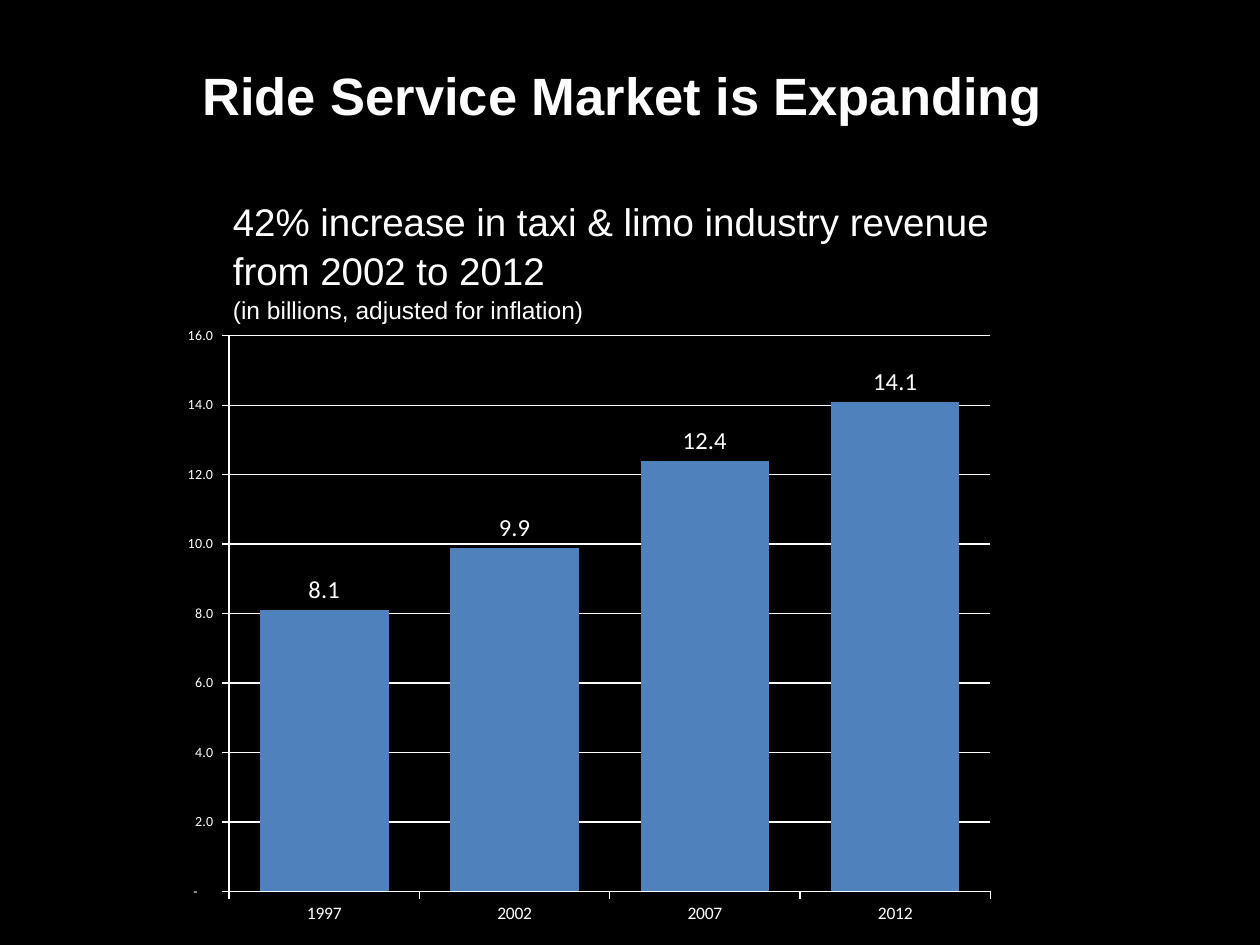
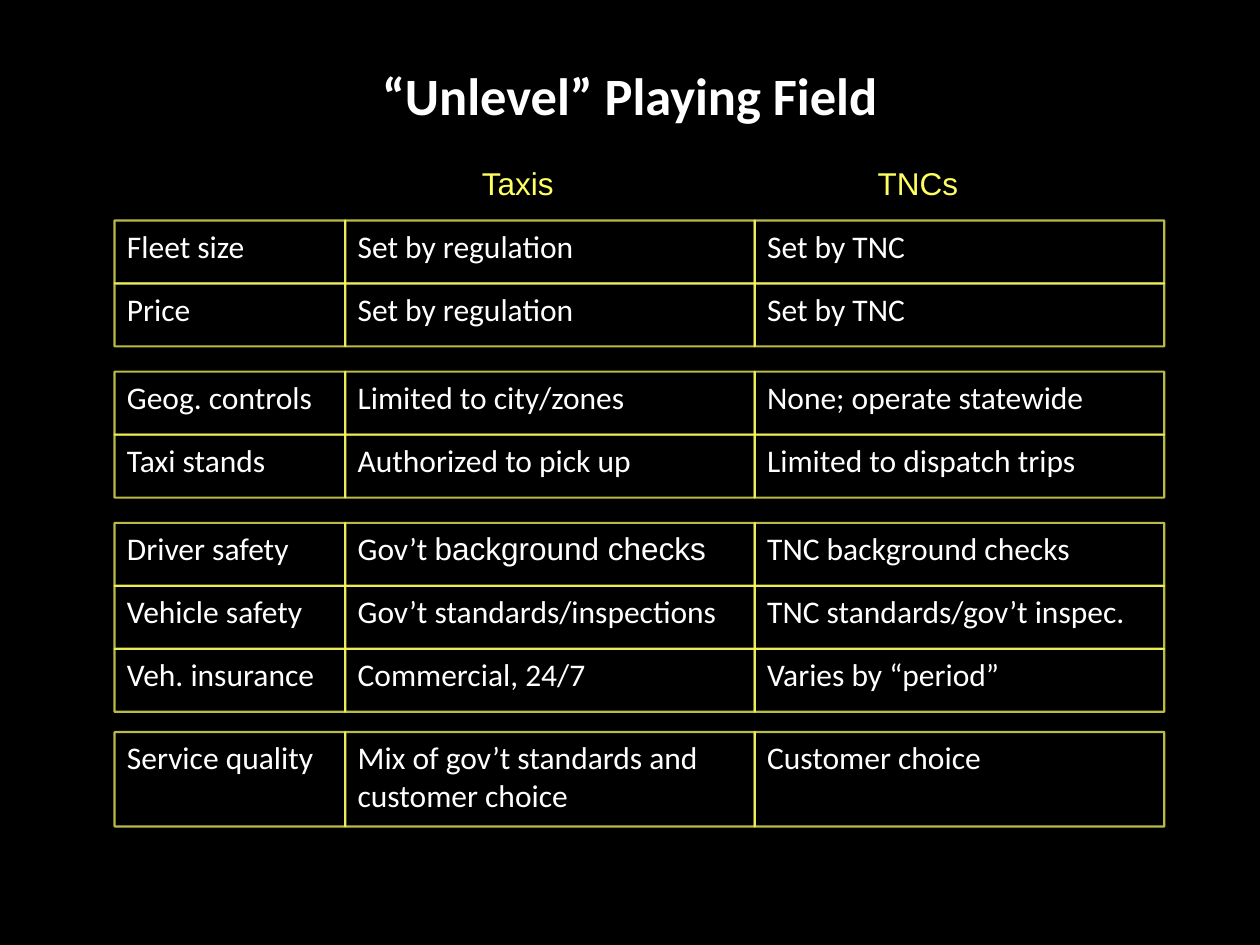
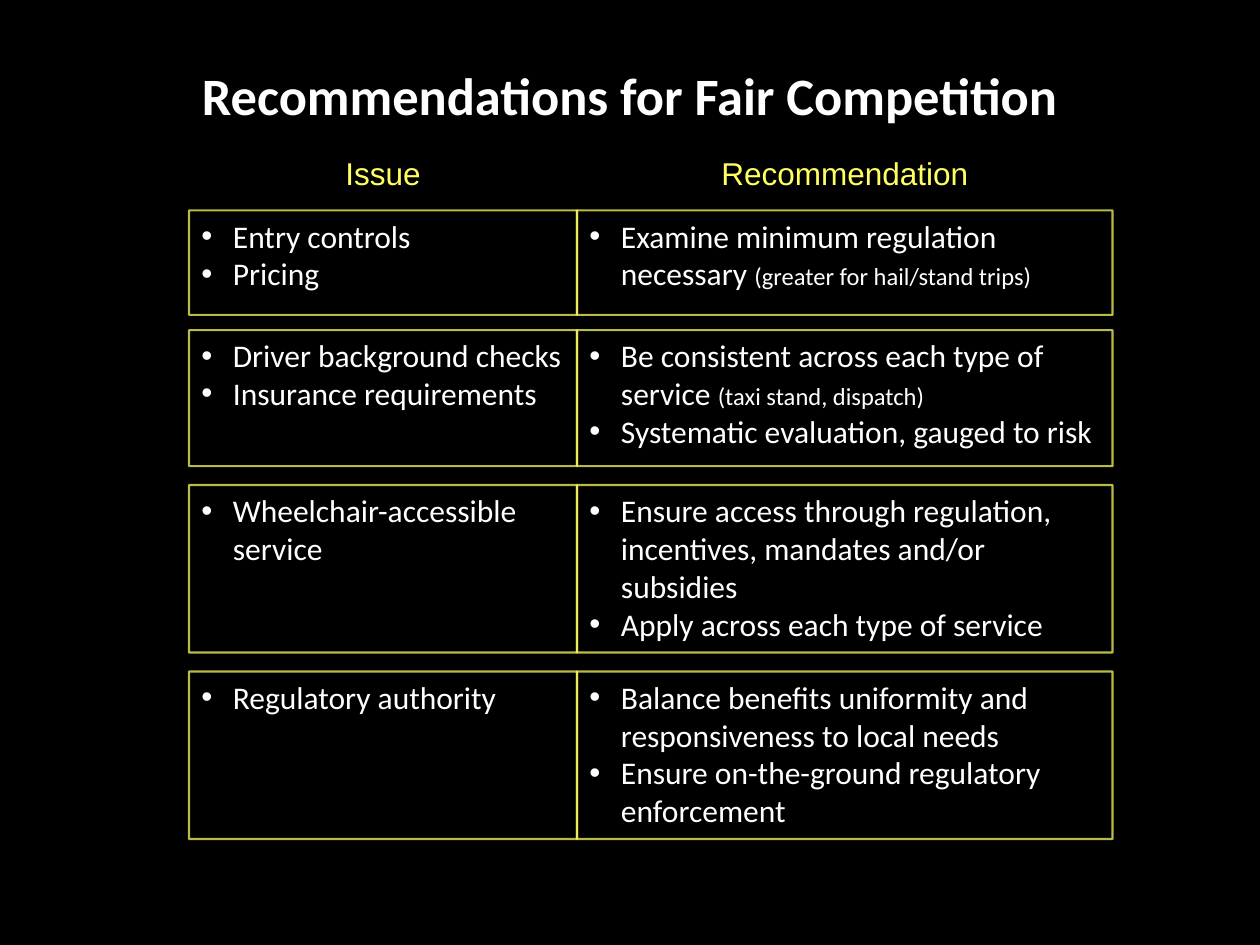
from dataclasses import dataclass
from itertools import accumulate
from typing import NamedTuple

from lxml.etree import SubElement
from pptx import Presentation
from pptx.chart.data import CategoryChartData
from pptx.dml.color import RGBColor
from pptx.enum.chart import XL_CHART_TYPE, XL_LABEL_POSITION, XL_TICK_MARK
from pptx.enum.shapes import MSO_SHAPE
from pptx.enum.text import MSO_ANCHOR, MSO_AUTO_SIZE, PP_ALIGN
from pptx.oxml import parse_xml
from pptx.oxml.ns import nsdecls, qn
from pptx.util import Inches, Pt


@dataclass(frozen=True)
class Theme:
    background: RGBColor = RGBColor(0x00, 0x00, 0x00)
    text: RGBColor = RGBColor(0xFF, 0xFF, 0xFF)
    accent: RGBColor = RGBColor(0xFF, 0xFF, 0x61)
    bar: RGBColor = RGBColor(0x4F, 0x81, 0xBD)
    sans: str = "Arial"
    body: str = "Calibri"
    title_size: float = 30
    lead_size: float = 22
    cell_size: float = 18
    note_size: float = 14
    axis_size: float = 10
    scale_size: float = 8
    border: float = 1.25
    border_alpha: int = 72000


THEME = Theme()
AXIS_FORMAT = '_(* #,##0.0_);_(* \\(#,##0.0\\);_(* "-"??_);_(@_)'


class Run(NamedTuple):
    text: str
    size: float = THEME.cell_size
    font: str = THEME.body
    color: RGBColor = THEME.text
    bold: bool = False


def note(text):
    return Run(text, THEME.note_size)


def add_run(p, run):
    r = p.add_run()
    r.text = run.text
    r.font.size = Pt(run.size)
    r.font.name = run.font
    r.font.bold = run.bold
    r.font.color.rgb = run.color


def add_paragraphs(tf, paragraphs):
    """Write paragraphs; each one is a string, a Run, or a list of these."""
    for i, runs in enumerate(paragraphs):
        p = tf.paragraphs[0] if i == 0 else tf.add_paragraph()
        for run in [runs] if isinstance(runs, (str, Run)) else runs:
            add_run(p, Run(run) if isinstance(run, str) else run)


def style_master(prs):
    """Set the background and title box that all slides inherit."""
    fill = prs.slide_master.background.fill
    fill.solid()
    fill.fore_color.rgb = THEME.background
    title = prs.slide_layouts[5].placeholders.get(idx=0)
    title.left, title.top = Inches(0.5), Inches(0.42)
    title.width, title.height = Inches(9), Inches(0.83)
    tf = title.text_frame
    tf.vertical_anchor = MSO_ANCHOR.TOP
    tf.margin_top = Inches(0.08)
    tf.auto_size = MSO_AUTO_SIZE.NONE


def add_titled_slide(prs, title, font=THEME.body):
    slide = prs.slides.add_slide(prs.slide_layouts[5])
    p = slide.shapes.title.text_frame.paragraphs[0]
    p.alignment = PP_ALIGN.CENTER
    add_run(p, Run(title, THEME.title_size, font, bold=True))
    return slide


def add_box(slide, left, top, width, height, paragraphs):
    sp = slide.shapes.add_shape(MSO_SHAPE.RECTANGLE, Inches(left), Inches(top),
                                Inches(width), Inches(height))
    sp.shadow.inherit = False
    sp.fill.background()
    sp.line.fill.background()
    tf = sp.text_frame
    tf.word_wrap = True
    tf.vertical_anchor = MSO_ANCHOR.TOP
    add_paragraphs(tf, paragraphs)
    return sp


def add_heading(slide, left, top, width, text):
    sp = add_box(slide, left, top, width, 0.42,
                 [Run(text, font=THEME.sans, color=THEME.accent)])
    sp.text_frame.paragraphs[0].alignment = PP_ALIGN.CENTER


def add_cell(slide, left, top, width, height, paragraphs, bulleted):
    sp = add_box(slide, left, top, width, height, paragraphs)
    sp.line.color.rgb = THEME.accent
    sp.line.width = Pt(THEME.border)
    line_color = next(sp._element.spPr.iter(qn("a:srgbClr")))
    SubElement(line_color, qn("a:alpha"), val=str(THEME.border_alpha))
    for p in sp.text_frame.paragraphs:
        p.alignment = PP_ALIGN.LEFT
        pPr = p._p.get_or_add_pPr()
        pPr.set("marL", str(Inches(0.25)))
        pPr.set("indent", str(-Inches(0.25)))
        if bulleted:
            SubElement(pPr, qn("a:buFont"), typeface=THEME.sans)
            SubElement(pPr, qn("a:buChar"), char="•")


def add_row(slide, left, top, widths, height, cells, bulleted=False):
    lefts = accumulate(widths[:-1], initial=left)
    for x, width, paragraphs in zip(lefts, widths, cells):
        add_cell(slide, x, top, width, height, paragraphs, bulleted)


def add_lead(slide):
    sp = slide.shapes.add_textbox(Inches(1.75), Inches(1.5), Inches(6.42), Inches(1.08))
    tf = sp.text_frame
    tf.word_wrap = True
    add_paragraphs(tf, [
        Run("42% increase in taxi & limo industry revenue from 2002 to 2012",
            THEME.lead_size, THEME.sans),
        Run("(in billions, adjusted for inflation)", THEME.note_size, THEME.sans),
    ])
    for p in tf.paragraphs:
        p.line_spacing = 1.06


def style_axis(axis, size):
    axis.major_tick_mark = XL_TICK_MARK.OUTSIDE
    axis.minor_tick_mark = XL_TICK_MARK.NONE
    axis.format.line.color.rgb = THEME.text
    axis.format.line.width = Pt(0.75)
    axis.tick_labels.font.size = Pt(size)
    axis.tick_labels.font.color.rgb = THEME.text


def fix_plot_area(chart, x, y, w, h):
    """Place the inner plot area by fractions of a chart without background."""
    plot_area = chart._chartSpace.chart.plotArea
    for old in plot_area.findall(qn("c:layout")):
        plot_area.remove(old)
    layout = SubElement(plot_area, qn("c:layout"))
    plot_area.insert(0, layout)
    manual = SubElement(layout, qn("c:manualLayout"))
    settings = {"layoutTarget": "inner", "xMode": "edge", "yMode": "edge",
                "x": x, "y": y, "w": w, "h": h}
    for tag, value in settings.items():
        SubElement(manual, qn(f"c:{tag}"), val=str(value))
    chart._chartSpace.chart.addnext(parse_xml(
        f'<c:spPr {nsdecls("c", "a")}><a:noFill/><a:ln><a:noFill/></a:ln></c:spPr>'))


def add_revenue_chart(slide):
    data = CategoryChartData(number_format="0.0")
    data.categories = ["1997", "2002", "2007", "2012"]
    data.add_series("Series 1", [8.1, 9.9, 12.4, 14.1])
    chart = slide.shapes.add_chart(
        XL_CHART_TYPE.COLUMN_CLUSTERED, Inches(1.42), Inches(2.42),
        Inches(6.64), Inches(4.91), data).chart
    chart.has_title = False
    chart.has_legend = False
    chart.font.name = THEME.body
    chart.font.size = Pt(THEME.axis_size)
    chart.font.color.rgb = THEME.text
    fix_plot_area(chart, 0.06, 0.05, 0.91, 0.9)

    style_axis(chart.category_axis, THEME.axis_size)
    scale = chart.value_axis
    style_axis(scale, THEME.scale_size)
    scale.minimum_scale, scale.maximum_scale, scale.major_unit = 0, 16, 2
    scale.has_major_gridlines = True
    scale.major_gridlines.format.line.color.rgb = THEME.text
    scale.major_gridlines.format.line.width = Pt(0.75)
    scale.tick_labels.number_format = AXIS_FORMAT
    scale.tick_labels.number_format_is_linked = False

    plot = chart.plots[0]
    plot.gap_width = 48
    plot.vary_by_categories = False
    fill = plot.series[0].format.fill
    fill.solid()
    fill.fore_color.rgb = THEME.bar
    plot.has_data_labels = True
    labels = plot.data_labels
    labels.show_value = True
    labels.number_format = "0.0"
    labels.number_format_is_linked = False
    labels.position = XL_LABEL_POSITION.OUTSIDE_END
    labels.font.size = Pt(THEME.note_size)
    labels.font.name = THEME.body
    labels.font.color.rgb = THEME.text


def build_market(prs):
    slide = add_titled_slide(prs, "Ride Service Market is Expanding ", THEME.sans)
    add_lead(slide)
    add_revenue_chart(slide)


def build_playing_field(prs):
    slide = add_titled_slide(prs, "“Unlevel” Playing Field")
    add_heading(slide, 2.57, 1.25, 3.08, "Taxis")
    add_heading(slide, 5.16, 1.25, 4.25, "TNCs")
    groups = [  # top, row height, rows
        (1.75, 0.5, [
            (["Fleet size"], ["Set by regulation"], ["Set by TNC"]),
            (["Price"], ["Set by regulation"], ["Set by TNC"]),
        ]),
        (2.95, 0.5, [
            (["Geog. controls"], ["Limited to city/zones"], ["None; operate statewide"]),
            (["Taxi stands"], ["Authorized to pick up"], ["Limited to dispatch trips"]),
        ]),
        (4.15, 0.5, [
            (["Driver safety"],
             [["Gov’t ", Run("background checks", font=THEME.sans)]],
             ["TNC background checks"]),
            (["Vehicle safety"], ["Gov’t standards/inspections"],
             ["TNC standards/gov’t inspec."]),
            (["Veh. insurance"], ["Commercial, 24/7"], ["Varies by “period”"]),
        ]),
        (5.81, 0.75, [
            (["Service quality"], ["Mix of gov’t standards and", "customer choice"],
             ["Customer choice"]),
        ]),
    ]
    for top, height, rows in groups:
        for i, cells in enumerate(rows):
            add_row(slide, 0.91, top + i * height, (1.83, 3.25, 3.25), height, cells)


def build_recommendations(prs):
    slide = add_titled_slide(prs, "Recommendations for Fair Competition")
    left, widths = 1.5, (3.08, 4.25)
    add_heading(slide, left, 1.17, widths[0], "Issue")
    add_heading(slide, left + widths[0], 1.17, widths[1], "Recommendation")
    rows = [  # top, height, issue, recommendation
        (1.67, 0.83, ["Entry controls", "Pricing"],
         [["Examine minimum regulation necessary ",
           note("(greater for hail/stand trips)")]]),
        (2.62, 1.08, ["Driver background checks", "Insurance requirements"],
         [["Be consistent across each type of service ", note("(taxi stand, dispatch)")],
          "Systematic evaluation, gauged to risk"]),
        (3.85, 1.33, ["Wheelchair-accessible service"],
         ["Ensure access through regulation, incentives, mandates and/or subsidies",
          "Apply across each type of service"]),
        (5.33, 1.33, ["Regulatory authority"],
         ["Balance benefits uniformity and responsiveness to local needs",
          "Ensure on-the-ground regulatory enforcement"]),
    ]
    for top, height, *cells in rows:
        add_row(slide, left, top, widths, height, cells, bulleted=True)


def main():
    prs = Presentation()
    prs.slide_width, prs.slide_height = Inches(10), Inches(7.5)
    style_master(prs)
    build_market(prs)
    build_playing_field(prs)
    build_recommendations(prs)
    prs.save("out.pptx")


if __name__ == "__main__":
    main()
